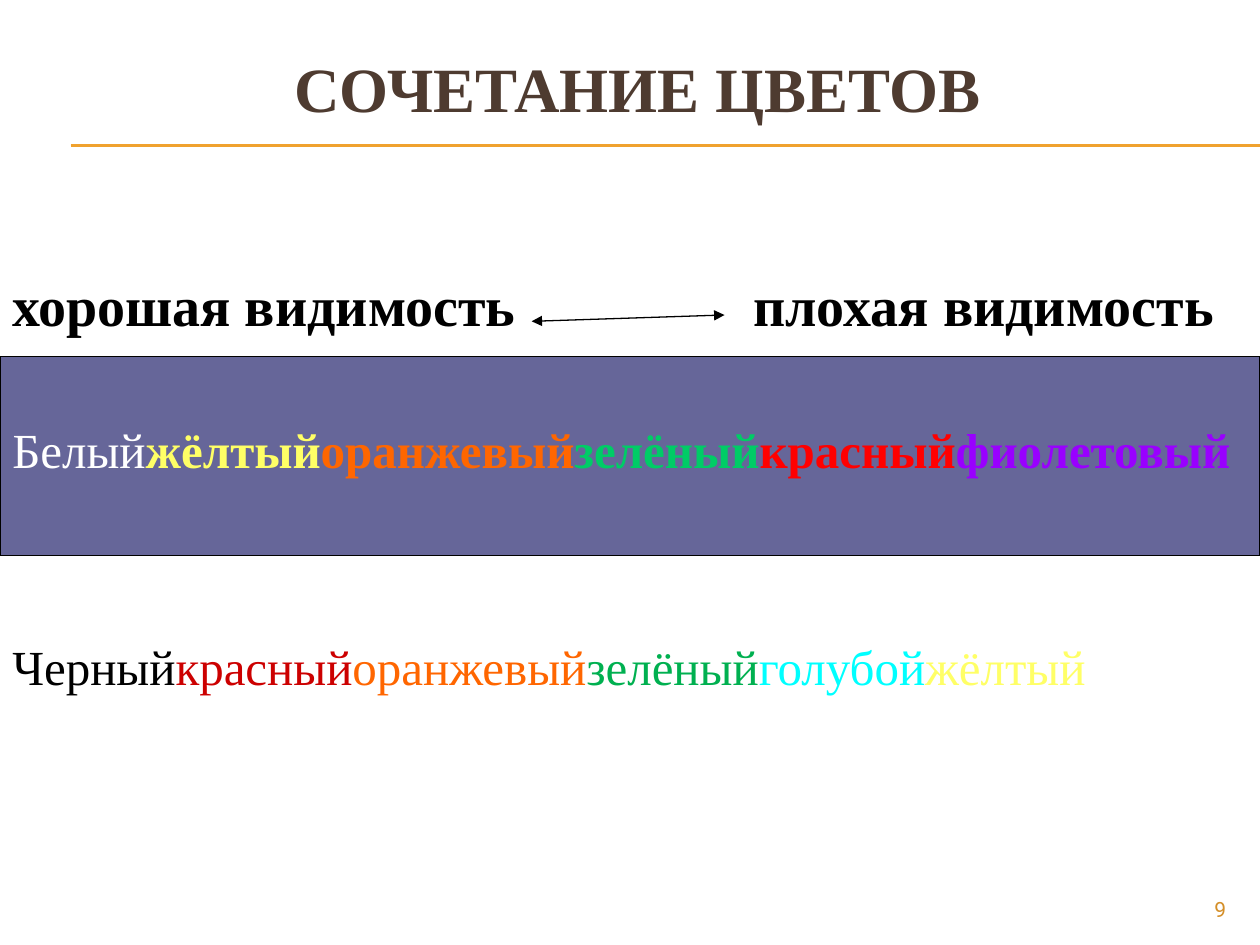
from dataclasses import dataclass

from lxml.etree import SubElement
from pptx import Presentation
from pptx.dml.color import RGBColor
from pptx.enum.shapes import MSO_CONNECTOR, MSO_SHAPE
from pptx.enum.text import MSO_ANCHOR, PP_ALIGN
from pptx.oxml.ns import qn
from pptx.shapes.connector import Connector
from pptx.slide import Slide
from pptx.text.text import _Paragraph as Paragraph
from pptx.util import Inches, Pt


@dataclass(frozen=True)
class Theme:
    serif: str = "Times New Roman"
    sans: str = "Roboto"
    title: str = "4E3B30"
    accent: str = "F0A22E"
    number: str = "D48F29"
    band: str = "666699"
    black: str = "000000"
    title_size: float = 36
    heading_size: float = 32
    body_size: float = 28
    number_size: float = 12
    line_width: float = 0.75


THEME = Theme()


@dataclass(frozen=True)
class Word:
    text: str
    color: str
    bold: bool = False


@dataclass(frozen=True)
class TextLine:
    left: float
    top: float
    width: float
    height: float
    words: tuple[Word, ...]
    size: float
    font: str = THEME.serif
    align: PP_ALIGN = PP_ALIGN.LEFT
    anchor: MSO_ANCHOR = MSO_ANCHOR.TOP
    tab: float | None = None


@dataclass(frozen=True)
class Line:
    start: tuple[float, float]
    end: tuple[float, float]
    color: str
    arrows: bool = False


RULES = tuple(Line((0.56, y), (10, y), THEME.accent) for y in (1.15, 1.16))
VISIBILITY_ARROW = Line((4.22, 2.55), (5.75, 2.5), THEME.black, arrows=True)

TEXT_LINES = (
    TextLine(9, 7.08, 0.83, 0.27, (Word("9", THEME.number),), THEME.number_size,
             THEME.sans, PP_ALIGN.RIGHT, MSO_ANCHOR.MIDDLE),
    TextLine(0.31, 0.23, 9.5, 0.92, (Word("СОЧЕТАНИЕ ЦВЕТОВ", THEME.title, True),),
             THEME.title_size, align=PP_ALIGN.CENTER, anchor=MSO_ANCHOR.MIDDLE),
    TextLine(0, 2.1, 10, 0.64,
             (Word("хорошая видимость\tплохая видимость", THEME.black, True),),
             THEME.heading_size, tab=5.88),
    TextLine(0, 3.28, 10, 0.57, (
        Word("Белый", "FFFFFF"),
        Word("жёлтый", "FFFF66", True),
        Word("оранжевый", "FF6600", True),
        Word("зелёный", "00CC66", True),
        Word("красный", "FF0000", True),
        Word("фиолетовый", "9900FF", True),
    ), THEME.body_size),
    TextLine(0, 5, 10, 0.57, (
        Word("Черный", THEME.black),
        Word("красный", "CC0000"),
        Word("оранжевый", "FF6600"),
        Word("зелёный", "00B050"),
        Word("голубой", "00FFFF"),
        Word("жёлтый", "FFFF66"),
    ), THEME.body_size),
)


def rgb(color: str) -> RGBColor:
    return RGBColor.from_string(color)


def add_tab_stop(paragraph: Paragraph, position: float) -> None:
    properties = paragraph._p.get_or_add_pPr()
    tab_list = SubElement(properties, qn("a:tabLst"))
    SubElement(tab_list, qn("a:tab"), pos=str(Inches(position)), algn="l")


def add_arrowheads(connector: Connector) -> None:
    outline = connector.line._get_or_add_ln()
    for end in ("a:headEnd", "a:tailEnd"):
        SubElement(outline, qn(end), type="triangle")


def draw_line(slide: Slide, line: Line) -> None:
    connector = slide.shapes.add_connector(
        MSO_CONNECTOR.STRAIGHT, *map(Inches, line.start + line.end))
    connector.line.color.rgb = rgb(line.color)
    connector.line.width = Pt(THEME.line_width)
    if line.arrows:
        add_arrowheads(connector)
    SubElement(connector._element.spPr, qn("a:effectLst"))


def draw_band(slide: Slide) -> None:
    """Draw the dark background behind the light colour words."""
    band = slide.shapes.add_shape(
        MSO_SHAPE.RECTANGLE, Inches(0), Inches(2.83), Inches(10), Inches(1.58))
    band.shadow.inherit = False
    band.fill.solid()
    band.fill.fore_color.rgb = rgb(THEME.band)
    band.line.color.rgb = rgb(THEME.black)
    band.line.width = Pt(THEME.line_width)


def draw_text(slide: Slide, line: TextLine) -> None:
    box = slide.shapes.add_textbox(
        *map(Inches, (line.left, line.top, line.width, line.height)))
    frame = box.text_frame
    frame.word_wrap = True
    frame.vertical_anchor = line.anchor
    paragraph = frame.paragraphs[0]
    paragraph.alignment = line.align
    if line.tab is not None:
        add_tab_stop(paragraph, line.tab)
    for word in line.words:
        run = paragraph.add_run()
        run.text = word.text
        run.font.name = line.font
        run.font.size = Pt(line.size)
        run.font.bold = word.bold
        run.font.color.rgb = rgb(word.color)


def main() -> None:
    presentation = Presentation()
    presentation.slide_width = Inches(10)
    presentation.slide_height = Inches(7.5)
    slide = presentation.slides.add_slide(presentation.slide_layouts[6])
    draw_band(slide)
    for line in (*RULES, VISIBILITY_ARROW):
        draw_line(slide, line)
    for text_line in TEXT_LINES:
        draw_text(slide, text_line)
    presentation.save("out.pptx")


if __name__ == "__main__":
    main()
